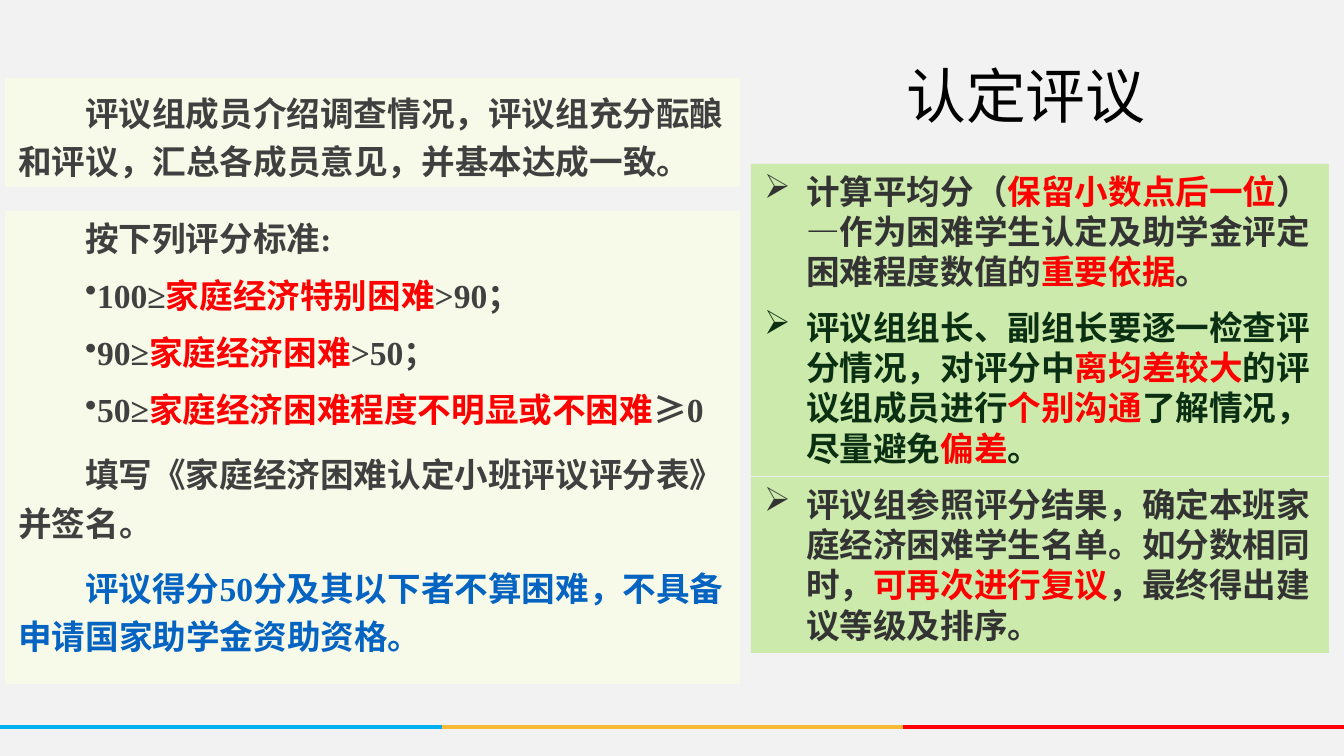
from lxml import etree
from pptx import Presentation
from pptx.dml.color import RGBColor
from pptx.enum.shapes import MSO_CONNECTOR as Connector, MSO_SHAPE as Shape
from pptx.enum.text import MSO_ANCHOR as Anchor, MSO_AUTO_SIZE as AutoSize, PP_ALIGN as Align
from pptx.oxml.ns import qn
from pptx.util import Pt

PX = 914400 / 134.4
BACKGROUND = RGBColor(0xF2, 0xF2, 0xF2)
CREAM = RGBColor(0xF8, 0xFA, 0xE9)
LIGHT_GREEN = RGBColor(0xCC, 0xEA, 0xAC)
BLACK = RGBColor(0, 0, 0)
GREY = RGBColor(0x40, 0x40, 0x40)
DARK_GREY = RGBColor(0x33, 0x33, 0x33)
DARK_GREEN = RGBColor(0x0B, 0x2F, 0x12)
BLUE = RGBColor(0x05, 0x63, 0xC1)
RED = RGBColor(0xFF, 0, 0)
STRIPES = (RGBColor(0, 0xB0, 0xF0), RGBColor(0xF9, 0xBB, 0x35), RED)

OPINION = (["评议组成员介绍调查情况，评议组充分酝酿和评议，汇总各成员意见，并基本达成一致。"], GREY, None, 1.2)
CRITERIA = [
    (["按下列评分标准:"], GREY, None, 1),
    (["100≥", "家庭经济特别困难", ">90；"], GREY, "•", 1),
    (["90≥", "家庭经济困难", ">50；"], GREY, "•", 1),
    (["50≥", "家庭经济困难程度不明显或不困难", "≥0"], GREY, "•", 1),
    (["填写《家庭经济困难认定小班评议评分表》并签名。"], GREY, None, 1.2),
    (["评议得分50分及其以下者不算困难，不具备申请国家助学金资助资格。"], BLUE, None, 1.2),
]
STEPS = [
    (164, 136, DARK_GREY, ["计算平均分（", "保留小数点后一位",
                           "）—作为困难学生认定及助学金评定困难程度数值的", "重要依据", "。"]),
    (300, 176, DARK_GREEN, ["评议组组长、副组长要逐一检查评分情况，对评分中", "离均差较大",
                            "的评议组成员进行", "个别沟通", "了解情况，尽量避免", "偏差", "。"]),
    (477, 176, DARK_GREY, ["评议组参照评分结果，确定本班家庭经济困难学生名单。如分数相同时，",
                           "可再次进行复议", "，最终得出建议等级及排序。"]),
]


def px(*lengths):
    return [round(length * PX) for length in lengths]


class Board:
    font = "Times New Roman"
    body_size = Pt(18)
    accent = RED

    def __init__(self, slide):
        self.slide = slide
        slide.background.fill.solid()
        slide.background.fill.fore_color.rgb = BACKGROUND

    def style(self, run, size, color, bold):
        run.font.name = self.font
        run.font.size = size
        run.font.bold = bold
        run.font.color.rgb = color

    def title(self, text, *box):
        frame = self.slide.shapes.add_textbox(*px(*box)).text_frame
        frame.word_wrap = True
        frame.text = text
        heading = frame.paragraphs[0]
        heading.alignment = Align.CENTER
        heading.line_spacing = 0.9
        self.style(heading.runs[0], Pt(32), BLACK, False)

    def panel(self, fill, *box):
        panel = self.slide.shapes.add_shape(Shape.RECTANGLE, *px(*box))
        panel.shadow.inherit = False
        panel.fill.solid()
        panel.fill.fore_color.rgb = fill
        panel.line.fill.background()
        frame = panel.text_frame
        frame.word_wrap = True
        frame.vertical_anchor = Anchor.TOP
        frame.auto_size = AutoSize.SHAPE_TO_FIT_TEXT
        return frame

    def paragraph(self, paragraph, parts, color, margin, indent, bullet=None, spacing=1, before=0):
        paragraph.alignment = Align.LEFT
        paragraph.line_spacing = spacing
        paragraph.space_before = Pt(before)
        properties = paragraph._p.get_or_add_pPr()
        for name, length in zip(("marL", "indent"), px(margin, indent)):
            properties.set(name, str(length))
        if bullet:
            etree.SubElement(properties, qn("a:buChar")).set("char", bullet)
        for index, part in enumerate(parts):
            run = paragraph.add_run()
            run.text = part
            self.style(run, self.body_size, self.accent if index % 2 else color, True)

    def indented(self, paragraphs, *box):
        frame = self.panel(CREAM, *box)
        for index, (parts, color, bullet, spacing) in enumerate(paragraphs):
            paragraph = frame.add_paragraph() if index else frame.paragraphs[0]
            self.paragraph(paragraph, parts, color, 0, 67, bullet, spacing, 9)

    def step(self, parts, color, *box):
        frame = self.panel(LIGHT_GREEN, *box)
        self.paragraph(frame.paragraphs[0], parts, color, 42, -42, "➢")

    def stripe(self, color, left, right, y):
        stripe = self.slide.shapes.add_connector(Connector.STRAIGHT, *px(left, y, right, y))
        stripe.line.color.rgb = color
        stripe.line.width = Pt(2.25)
        etree.SubElement(stripe._element.spPr, qn("a:effectLst"))


def main():
    deck = Presentation()
    deck.slide_width, deck.slide_height = px(1344, 756)
    board = Board(deck.slides.add_slide(deck.slide_layouts[6]))
    board.title("认定评议", 712, 60, 628, 95)
    board.indented([OPINION], 5, 78, 735, 109)
    board.indented(CRITERIA, 5, 211, 735, 473)
    for top, height, color, parts in STEPS:
        board.step(parts, color, 751, top, 578, height)
    for index, color in enumerate(STRIPES):
        left = -19 + 461 * index
        board.stripe(color, left, left + 461, 727)
    deck.save("out.pptx")


if __name__ == "__main__":
    main()
